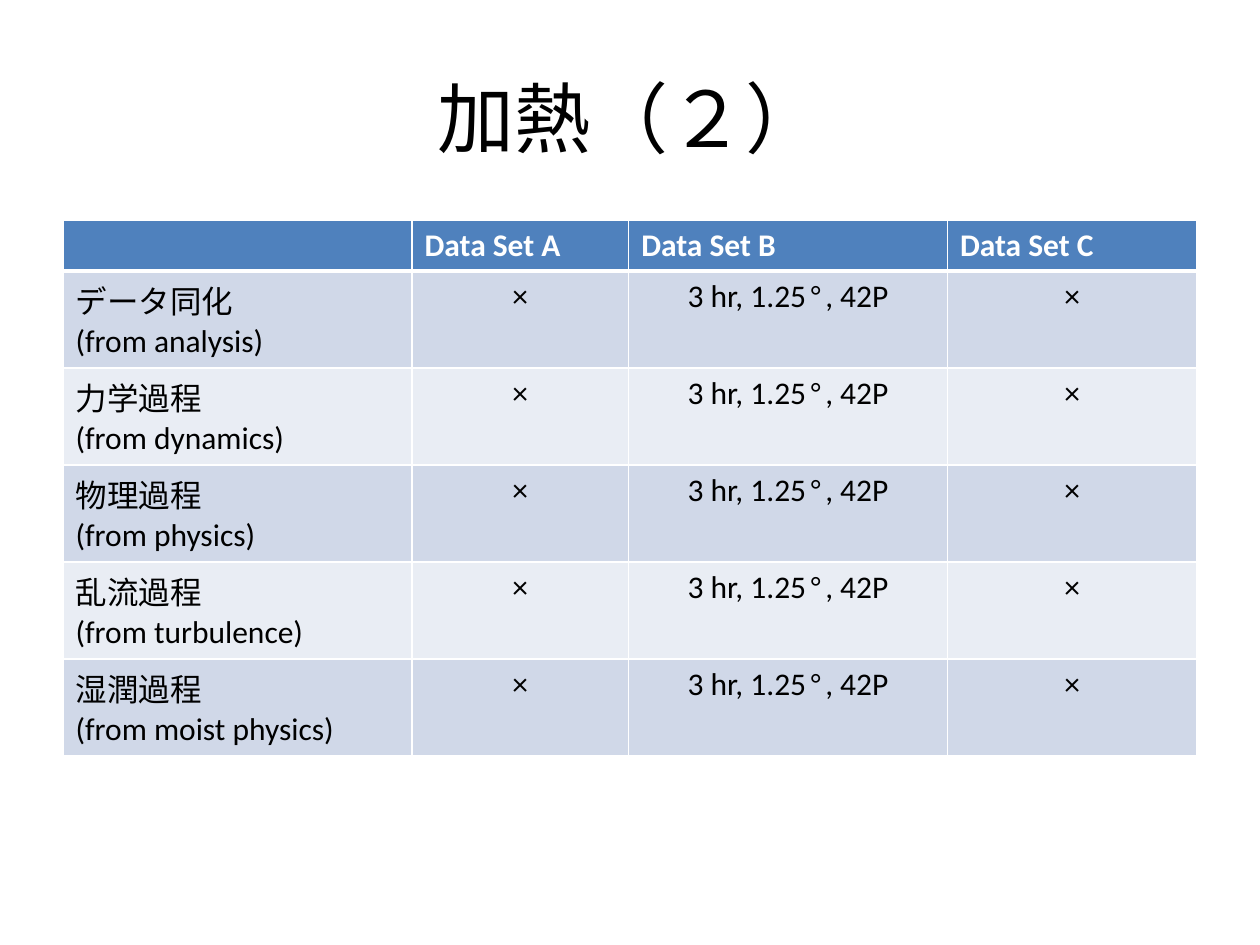
from lxml import etree
from pptx import Presentation
from pptx import util as u
from pptx.dml.color import RGBColor
from pptx.enum import text
from pptx.oxml import ns

TITLE = "加熱（２）"
HEAD = ["", "Data Set A", "Data Set B", "Data Set C"]
TERMS = [
    ("データ同化", "(from analysis)"),
    ("力学過程", "(from dynamics)"),
    ("物理過程", "(from physics)"),
    ("乱流過程", "(from turbulence)"),
    ("湿潤過程", "(from moist physics)"),
]
NONE = "×"
GRID = ["3 hr, 1.25", "°", ", 42P"]
WIDTHS = [2.77, 1.72, 2.53, 1.98]
HEIGHTS = [0.4] + [0.77] * len(TERMS)
INK = {"head": "4F81BD", "odd": "D0D8E8", "even": "E9EDF4",
       "white": "FFFFFF", "black": "000000"}
FONT = "Calibri"
LEFT = text.PP_ALIGN.LEFT
MID = text.PP_ALIGN.CENTER


def write(frame, lines, align, size, color, bold=False):
    for i, parts in enumerate(lines):
        para = frame.paragraphs[0] if i == 0 else frame.add_paragraph()
        para.alignment = align
        for part in parts:
            run = para.add_run()
            run.text = part
            look = {"name": "Courier New" if part == "°" else FONT,
                    "size": u.Pt(size), "bold": bold}
            for key, val in look.items():
                setattr(run.font, key, val)
            run.font.color.rgb = RGBColor.from_string(INK[color])


def edge(cell, widths):
    props = cell._tc.get_or_add_tcPr()
    for side, width in widths.items():
        line = etree.SubElement(props, ns.qn("a:ln" + side), w=str(u.Pt(width)))
        fill = etree.SubElement(line, ns.qn("a:solidFill"))
        etree.SubElement(fill, ns.qn("a:srgbClr"), val=INK["white"])


def main():
    deck = Presentation()
    deck.slide_width, deck.slide_height = u.Inches(10), u.Inches(7.5)
    slide = deck.slides.add_slide(deck.slide_layouts[6])

    box = slide.shapes.add_textbox(*map(u.Inches, (0.5, 0.3, 9, 1.25)))
    frame = box.text_frame
    frame.word_wrap = True
    frame.vertical_anchor = text.MSO_ANCHOR.MIDDLE
    write(frame, [[TITLE]], MID, 44, "black")

    rows = [[[[name]] if name else [] for name in HEAD]]
    for term in TERMS:
        rows.append([[[line] for line in term], [[NONE]], [GRID], [[NONE]]])

    place = map(u.Inches, (0.5, 1.75, sum(WIDTHS), sum(HEIGHTS)))
    table = slide.shapes.add_table(len(rows), len(HEAD), *place).table
    for col, width in zip(table.columns, WIDTHS):
        col.width = u.Inches(width)
    for r, row in enumerate(rows):
        table.rows[r].height = u.Inches(HEIGHTS[r])
        top = r == 0
        shade = "head" if top else "odd" if r % 2 else "even"
        for c, lines in enumerate(row):
            cell = table.cell(r, c)
            edge(cell, {"L": 1, "R": 1, "T": 3 if r == 1 else 1,
                        "B": 3 if top else 1})
            cell.fill.solid()
            cell.fill.fore_color.rgb = RGBColor.from_string(INK[shade])
            write(cell.text_frame, lines, LEFT if top or c == 0 else MID,
                  18, "white" if top else "black", top)

    deck.save("out.pptx")


if __name__ == "__main__":
    main()
